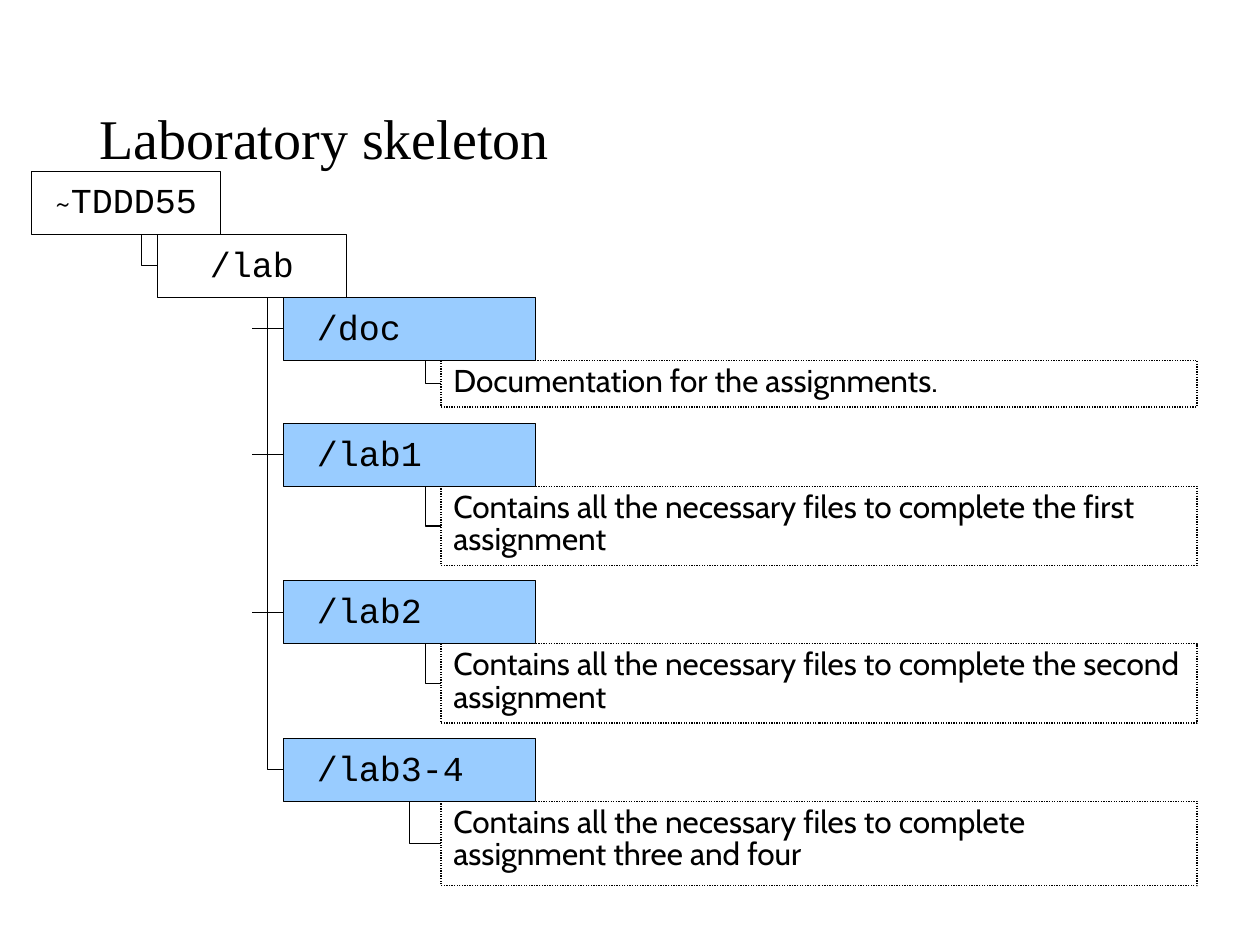
from lxml.etree import SubElement
from pptx import Presentation
from pptx.dml.color import RGBColor
from pptx.enum.dml import MSO_LINE
from pptx.enum.shapes import MSO_CONNECTOR, MSO_SHAPE
from pptx.enum.text import MSO_ANCHOR as ANCHOR, PP_ALIGN as ALIGN
from pptx.oxml.ns import qn
from pptx.util import Inches, Pt

COLORS = {"ink": "000000", "folder": "99CCFF"}
BODY, CODE, HEADING = "Cabin", "Courier New", "Times New Roman"
FOLDER_HEIGHT, STEP = 0.5, 0.25
FOLDER_LEFT, NOTE_LEFT, NOTE_WIDTH = 2.25, 3.5, 6
FOLDERS = [
    ("/doc", 2.36, 0.37, "Documentation for the assignments."),
    ("/lab1", 3.36, 0.63, "Contains all the necessary files to complete the first assignment"),
    ("/lab2", 4.61, 0.63, "Contains all the necessary files to complete the second assignment"),
    ("/lab3-4", 5.86, 0.67, "Contains all the necessary files to complete assignment three and four"),
]


def color(name):
    """Return the named colour."""
    return RGBColor.from_string(COLORS[name])


def write(shape, *runs, size=20, align=ALIGN.LEFT, anchor=ANCHOR.MIDDLE, spacing=0.9):
    """Write (text, font) runs as one paragraph of a shape."""
    frame = shape.text_frame
    frame.word_wrap = True
    frame.vertical_anchor = anchor
    paragraph = frame.paragraphs[0]
    paragraph.alignment = align
    paragraph.line_spacing = spacing
    for text, font in runs:
        run = paragraph.add_run()
        run.text = text
        run.font.name = font
        run.font.size = Pt(size)
        run.font.color.rgb = color("ink")


def add_text(slide, left, top, width, height, *runs, **style):
    """Add a text box."""
    write(slide.shapes.add_textbox(*map(Inches, (left, top, width, height))), *runs, **style)


def add_box(slide, left, top, width, height, fill=None, dash=None):
    """Add an outlined rectangle."""
    box = slide.shapes.add_shape(MSO_SHAPE.RECTANGLE, *map(Inches, (left, top, width, height)))
    box.shadow.inherit = False
    if fill:
        box.fill.solid()
        box.fill.fore_color.rgb = color(fill)
    else:
        box.fill.background()
    box.line.color.rgb = color("ink")
    box.line.width = Pt(0.75)
    if dash:
        box.line.dash_style = dash
    return box


def add_branch(slide, start, end, bend=None):
    """Add an elbow line, with the bend as a share of its width."""
    branch = slide.shapes.add_connector(MSO_CONNECTOR.ELBOW, *map(Inches, (*start, *end)))
    branch.line.color.rgb = color("ink")
    branch.line.width = Pt(0.75)
    properties = branch._element.spPr
    SubElement(properties, qn("a:effectLst"))
    if bend is not None:
        guides = properties.find(qn("a:prstGeom")).get_or_add_avLst()
        SubElement(guides, qn("a:gd"), name="adj1", fmla=f"val {round(bend * 100000)}")


def add_folder(slide, name, top, note_height, note, is_last):
    """Add a folder with the note that describes it."""
    folder = add_box(slide, FOLDER_LEFT, top, 2, FOLDER_HEIGHT, fill="folder")
    write(folder, (" " + name, CODE))
    note_top = top + FOLDER_HEIGHT
    add_box(slide, NOTE_LEFT, note_top, NOTE_WIDTH, note_height, dash=MSO_LINE.ROUND_DOT)
    add_text(slide, NOTE_LEFT, note_top, 5.83 if is_last else NOTE_WIDTH, note_height,
             (note, BODY), size=18, anchor=ANCHOR.TOP, spacing=0.86)
    add_branch(slide, (NOTE_LEFT - STEP, note_top), (NOTE_LEFT, note_top + note_height / 2),
               bend=0 if is_last else None)


def main():
    """Build the slide with the folder tree."""
    deck = Presentation()
    deck.slide_width, deck.slide_height = Inches(10), Inches(7.5)
    slide = deck.slides.add_slide(deck.slide_layouts[6])
    add_text(slide, 0.69, 0.4, 8.62, 1.45, ("Laboratory skeleton", HEADING), size=32)

    root = add_box(slide, 0.25, 1.36, 1.5, FOLDER_HEIGHT)
    write(root, ("~", BODY), ("TDDD55", CODE), align=ALIGN.CENTER, spacing=0.86)
    lab = add_box(slide, 1.25, 1.86, 1.5, FOLDER_HEIGHT)
    write(lab, ("/lab", CODE), align=ALIGN.CENTER)
    add_branch(slide, (1, 1.86), (1.25, 2.11))

    branch_top = FOLDERS[0][1]
    for folder in FOLDERS:
        add_folder(slide, *folder, is_last=folder is FOLDERS[-1])
        middle = folder[1] + FOLDER_HEIGHT / 2
        add_branch(slide, (FOLDER_LEFT, middle), (FOLDER_LEFT - STEP, branch_top))
        branch_top = middle
    deck.save("out.pptx")


if __name__ == "__main__":
    main()
